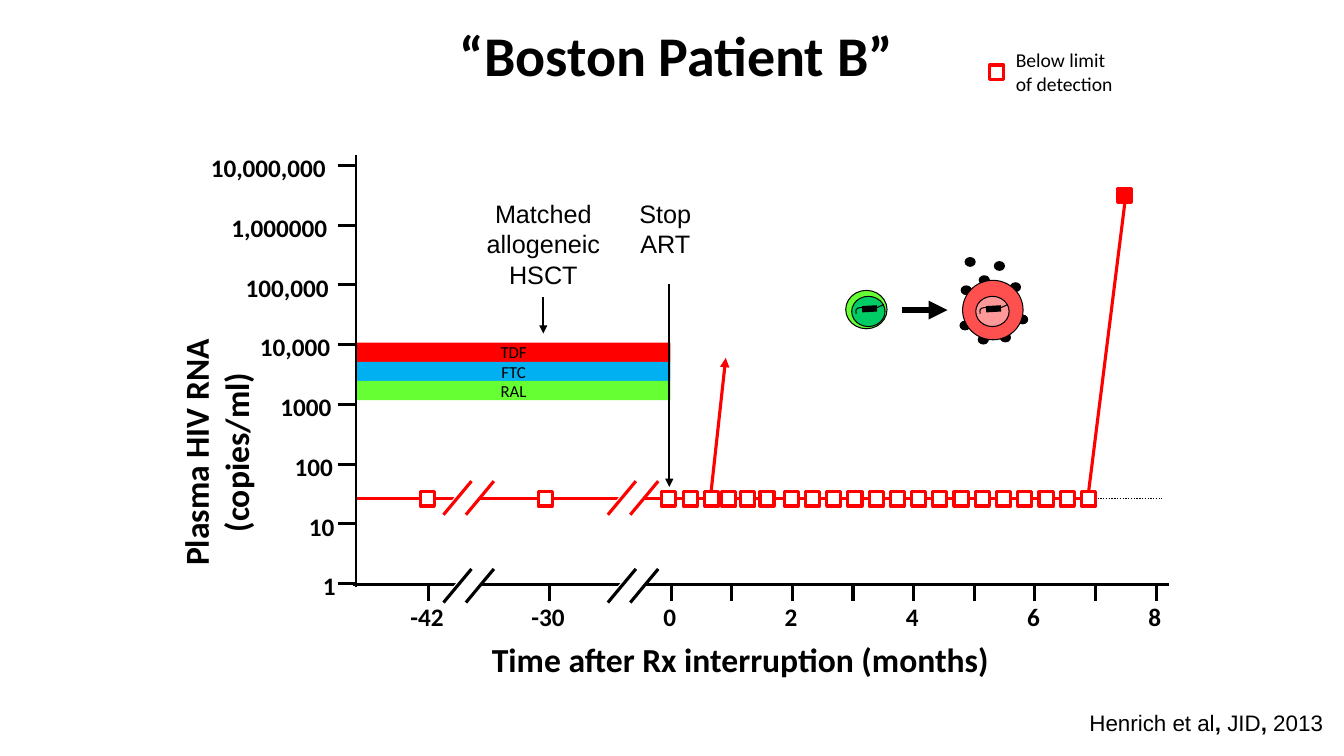
import pptx
import pptx.dml.color
import pptx.enum.dml
import pptx.enum.shapes
import pptx.enum.text
import pptx.oxml
import pptx.oxml.ns
import pptx.util

Pt = pptx.util.Pt
SHAPE = pptx.enum.shapes.MSO_SHAPE
ALIGN = pptx.enum.text.PP_ALIGN
BLACK, WHITE, RED = "000000", "FFFFFF", "FF0000"
AXIS_LABEL = {"size": Pt(18), "bold": True}
AXIS_TITLE = {"size": Pt(24), "bold": True}
NOTE = {"size": Pt(18), "name": "Arial"}
MARK = 10.1


def rgb(value):
    return pptx.dml.color.RGBColor.from_string(value)


def style_line(line, color, width):
    line.color.rgb = rgb(color)
    line.width = Pt(width)


def add_line(s, start, end, color=BLACK, width=2.25, arrow=False):
    c = s.shapes.add_connector(pptx.enum.shapes.MSO_CONNECTOR.STRAIGHT,
                               *map(Pt, (*start, *end)))
    style_line(c.line, color, width)
    props = c._element.spPr
    if arrow:
        head = pptx.oxml.parse_xml(
            f'<a:tailEnd {pptx.oxml.ns.nsdecls("a")} type="triangle"/>')
        c.line._get_or_add_ln().append(head)
    props.append(pptx.oxml.parse_xml(f'<a:effectLst {pptx.oxml.ns.nsdecls("a")}/>'))
    return c


def add_shape(s, kind, box, fill, line=None, width=2.25):
    sp = s.shapes.add_shape(kind, *map(Pt, box))
    sp.shadow.inherit = False
    sp.fill.solid()
    sp.fill.fore_color.rgb = rgb(fill)
    if line:
        style_line(sp.line, line, width)
    else:
        sp.line.fill.background()
    return sp


def add_marker(s, x, y, fill=WHITE):
    return add_shape(s, SHAPE.RECTANGLE, (x - MARK / 2, y - MARK / 2, MARK, MARK), fill, RED)


def write(tf, lines, font, align=ALIGN.LEFT, inset=True):
    """Fill a text frame; each line is a string or a list of (text, bold) runs."""
    tf.word_wrap = True
    if not inset:
        tf.margin_left = tf.margin_right = tf.margin_top = tf.margin_bottom = 0
    for i, line in enumerate(lines):
        p = tf.add_paragraph() if i else tf.paragraphs[0]
        p.alignment = align
        for text, bold in ([(line, None)] if isinstance(line, str) else line):
            r = p.add_run()
            r.text = text
            r.font.color.rgb = rgb(BLACK)
            for key, value in {"name": "Calibri", "bold": bold, **font}.items():
                setattr(r.font, key, value)


def add_text(s, box, lines, font, align=ALIGN.LEFT, inset=True):
    tb = s.shapes.add_textbox(*map(Pt, box))
    write(tb.text_frame, lines, font, align, inset)
    return tb


def add_break(s, x, y, color):
    """Two slanted strokes over a gap, centred on (x, y)."""
    gap = add_shape(s, SHAPE.RECTANGLE, (x - 5.7, y - 18.3, 15, 30), WHITE)
    gap.rotation = 39.2
    for mid in (x - 8, x + 8):
        add_line(s, (mid + 10, y - 12), (mid - 10, y + 12), color)


def draw_axes(s, box, zero, visits):
    x, y, w, h = box
    base = y + h + 0.7
    month = (x + w - zero) / 8
    labels = ["1", "10", "100", "1000", "10,000", "100,000", "1,000000", "10,000,000"]
    for i, label in enumerate(labels):
        tick = y + h - i * h / 7
        add_line(s, (x - 13, tick), (x, tick))
        add_text(s, (x - 114.4 - i, tick - 9.2, 100, 21.6), [label],
                 AXIS_LABEL, ALIGN.RIGHT, False)
    add_line(s, (x - 2, base), (x + w + 9.4, base))
    add_line(s, (x, y - 7.2), (x, base + 1.4), width=1.5)

    ticks = [(at, label) for label, at in visits.items()]
    ticks += [(zero + i * month, "" if i % 2 else str(i)) for i in range(9)]
    for at, label in ticks:
        add_line(s, (at, base), (at, base + 11.5))
        if label:
            add_text(s, (at - 26, base + 12.2, 50, 21.6), [label],
                     AXIS_LABEL, ALIGN.CENTER, False)

    add_text(s, (x + 90, base + 35.3, 400, 36), ["Time after Rx interruption (months)"],
             AXIS_TITLE)
    title = add_text(s, (x - 199.8, y + h / 2 + 23, 200, 65.5),
                     ["Plasma HIV RNA", "(copies/ml)"], AXIS_TITLE, ALIGN.CENTER)
    title.rotation = 270
    return base


def draw_drug_bars(s, box):
    x, y, w, h = box
    drugs = {"TDF": RED, "FTC": "00B0F0", "RAL": "66FF33"}
    step = h / len(drugs)
    for i, (drug, color) in enumerate(drugs.items()):
        bar = add_shape(s, SHAPE.RECTANGLE, (x, y + i * step, w, step), color)
        write(bar.text_frame, [drug], {"size": Pt(12)}, ALIGN.CENTER, False)


def draw_plot(s, box):
    x, y, w, h = box
    zero = x + 225.3
    level = y + 238
    visits = {"-42": x + 51.8, "-30": x + 138.2}
    breaks = (x + 80.6, x + 198)

    limit = add_line(s, (x, level), (x + w + 4, level), width=1)
    limit.line.dash_style = pptx.enum.dml.MSO_LINE.ROUND_DOT
    for start, end in ((x + 1, x + 234), (x + 217, x + 528)):
        add_line(s, (start, level), (end, level), RED)
    draw_drug_bars(s, (x + 0.7, y + 126.7, 224, 41))
    base = draw_axes(s, box, zero, visits)
    for at in breaks:
        add_break(s, at, level - 0.4, RED)
        add_break(s, at, base + 0.8, BLACK)

    add_text(s, (x + 78.9, y + 20.1, 110, 72.7), ["Matched", "allogeneic", "HSCT"],
             NOTE, ALIGN.CENTER)
    add_line(s, (x + 133.9, y + 94.3), (x + 133.9, y + 120.2), width=1.5, arrow=True)
    add_text(s, (x + 186, y + 20.1, 70, 51), ["Stop", "ART"], NOTE, ALIGN.CENTER)
    add_line(s, (x + 223.9, y + 85), (x + 223.9, y + 229.7), width=1.5, arrow=True)
    add_line(s, (x + 252.7, level + 4.6), (x + 264.2, y + 137.5), RED, arrow=True)

    weekly = [x + d for d in (223.2, 239, 254.1, 266.4, 280, 293.7)]
    later = [x + 311 + 15.17 * i for i in range(15)]
    for at in (visits["-42"] - 0.7, visits["-30"] - 2.9, *weekly, *later):
        last = add_marker(s, at, level + 0.3)
    rebound = add_marker(s, x + 549.3, y + 21.6, RED)
    rise = add_line(s, (later[-1], level), (x + 549.3, y + 26.6), RED)
    rise.begin_connect(last, 0)
    rise.end_connect(rebound, 2)


def draw_cell(s, box, nucleus, fill, core, virions=()):
    """A cell with viral DNA in its nucleus and virions around its edge."""
    x, y, w, h = box
    for dx, dy in virions:
        add_shape(s, SHAPE.OVAL, (x + dx, y + dy, 8, 7), BLACK)
    add_shape(s, SHAPE.OVAL, box, fill, BLACK, 0.75)
    nx, ny = x + nucleus[0], y + nucleus[1]
    add_shape(s, SHAPE.OVAL, (nx, ny, 23.8, 21.6), core, BLACK, 0.75)
    strand = [(3.2, 12.4), (3, 10.5), (3.2, 9.4), (4.4, 8.4), (6.5, 8),
              (11.5, 8.5), (17.9, 8.1), (23, 5.8)]
    points = [(Pt(nx + dx), Pt(ny + dy)) for dx, dy in strand]
    fb = s.shapes.build_freeform(*points[0])
    fb.add_line_segments(points[1:], close=False)
    sp = fb.convert_to_shape()
    sp.shadow.inherit = False
    sp.fill.background()
    style_line(sp.line, BLACK, 0.75)
    add_line(s, (nx + 7.4, ny + 9.2), (nx + 18, ny + 8.6), width=4.5)


def draw_infection(s, box):
    x, y, w, h = box
    virions = [(33.8, 1.4), (-1.4, 3.6), (11.5, -3.6), (-2.2, 28.8), (38.9, 24.5),
               (10.8, 38.9), (26.6, 37.4), (22.3, -13.7), (1.4, -16.6)]
    draw_cell(s, (x, y + 7.2, 29.5, 27.4), (4.3, 4.3), "66FF33", "00CC66")
    add_line(s, (x + 40.3, y + h / 2), (x + 72.7, y + h / 2), width=4.5, arrow=True)
    draw_cell(s, (x + w - 43.2, y, 43.2, h), (9.4, 11.5), "FF5050", "FF9999", virions)


def draw_legend(s, box):
    x, y, w, h = box
    add_marker(s, x + 5, y + h / 2)
    add_text(s, (x + 11.5, y, w - 11.5, h), ["Below limit", "of detection"], {"size": Pt(14)})


def main():
    prs = pptx.Presentation()
    prs.slide_width, prs.slide_height = Pt(960), Pt(540)
    s = prs.slides.add_slide(prs.slide_layouts[6])
    draw_plot(s, (254.2, 118.1, 571.6, 298.8))
    draw_infection(s, (604.1, 200.2, 126.7, 42.5))
    add_text(s, (141.1, 10.8, 684, 90), ["“Boston Patient B”"],
             {"size": Pt(40), "bold": True}, ALIGN.CENTER)
    draw_legend(s, (707, 31, 110, 41))
    citation = [("Henrich et al", False), (", ", True), ("JID", False),
                (", ", True), ("2013", False)]
    add_text(s, (771.1, 503.3, 188.9, 26.6), [citation], {"size": Pt(16), "name": "Arial"})
    prs.save("out.pptx")


if __name__ == "__main__":
    main()
